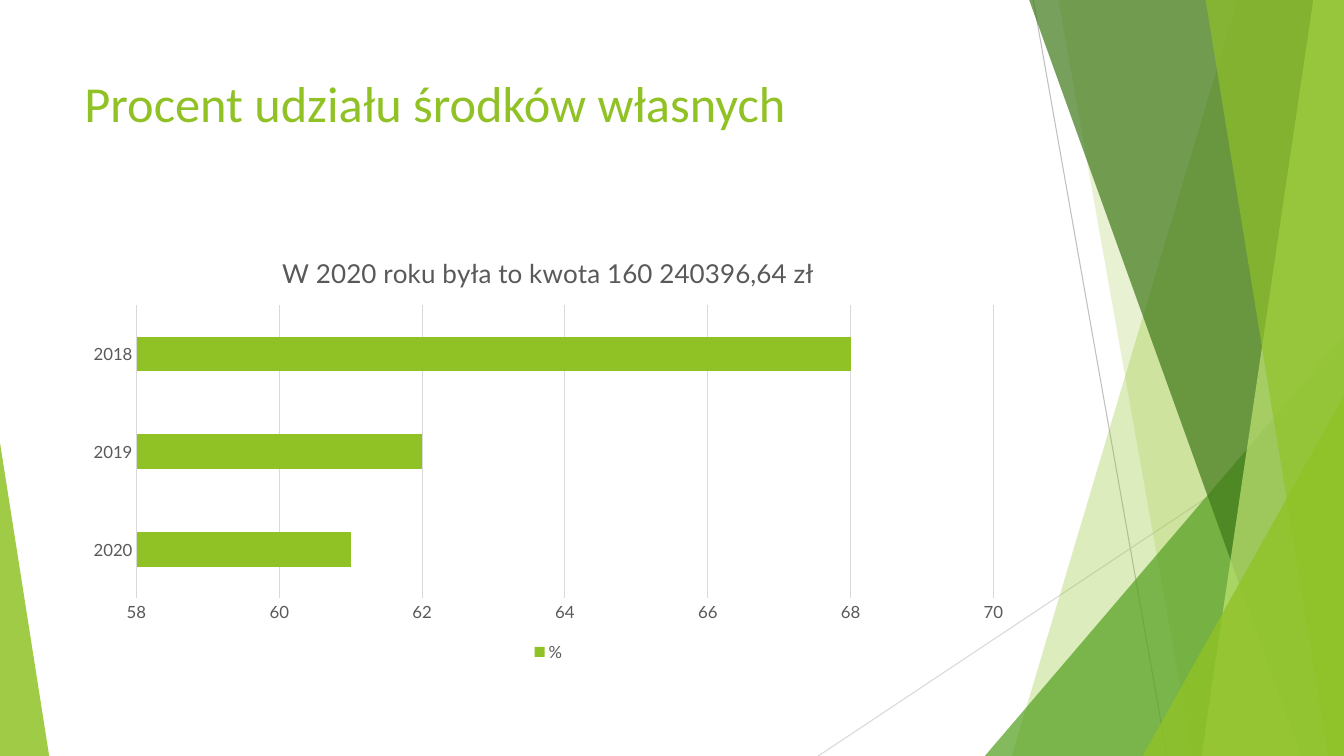
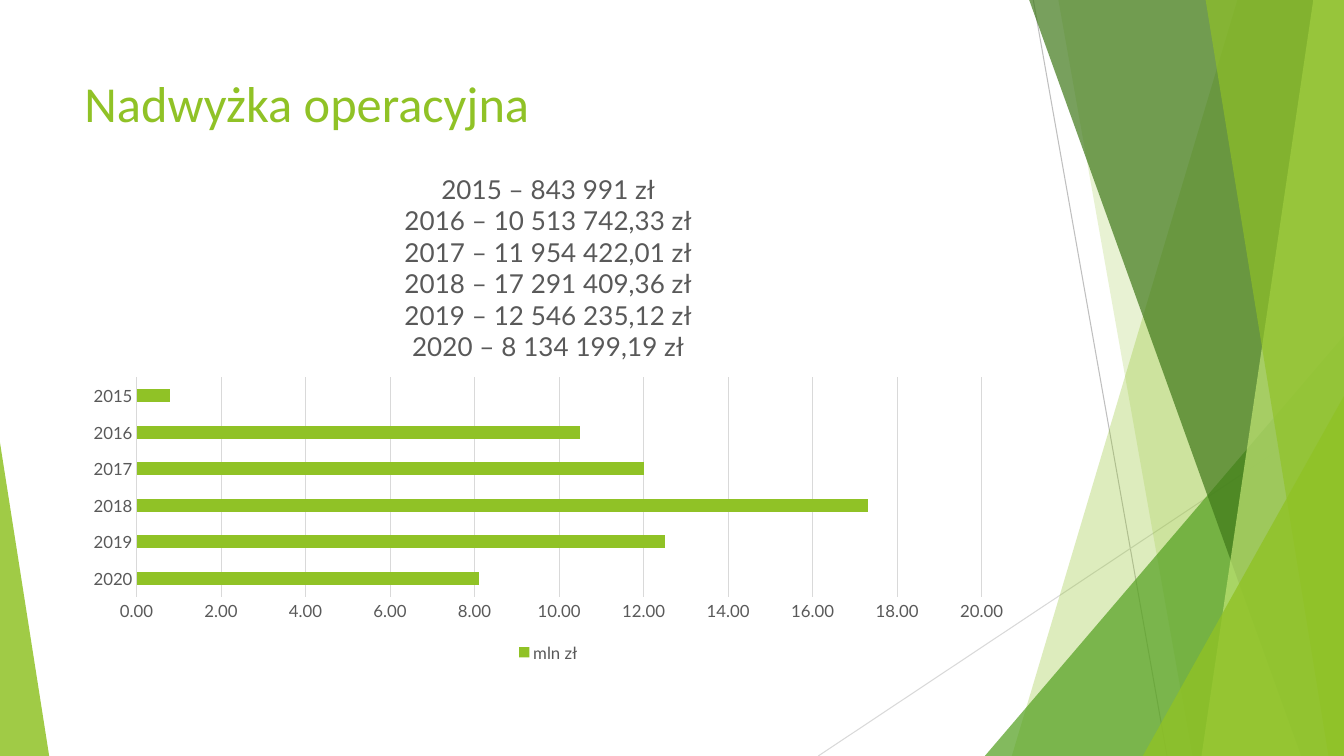
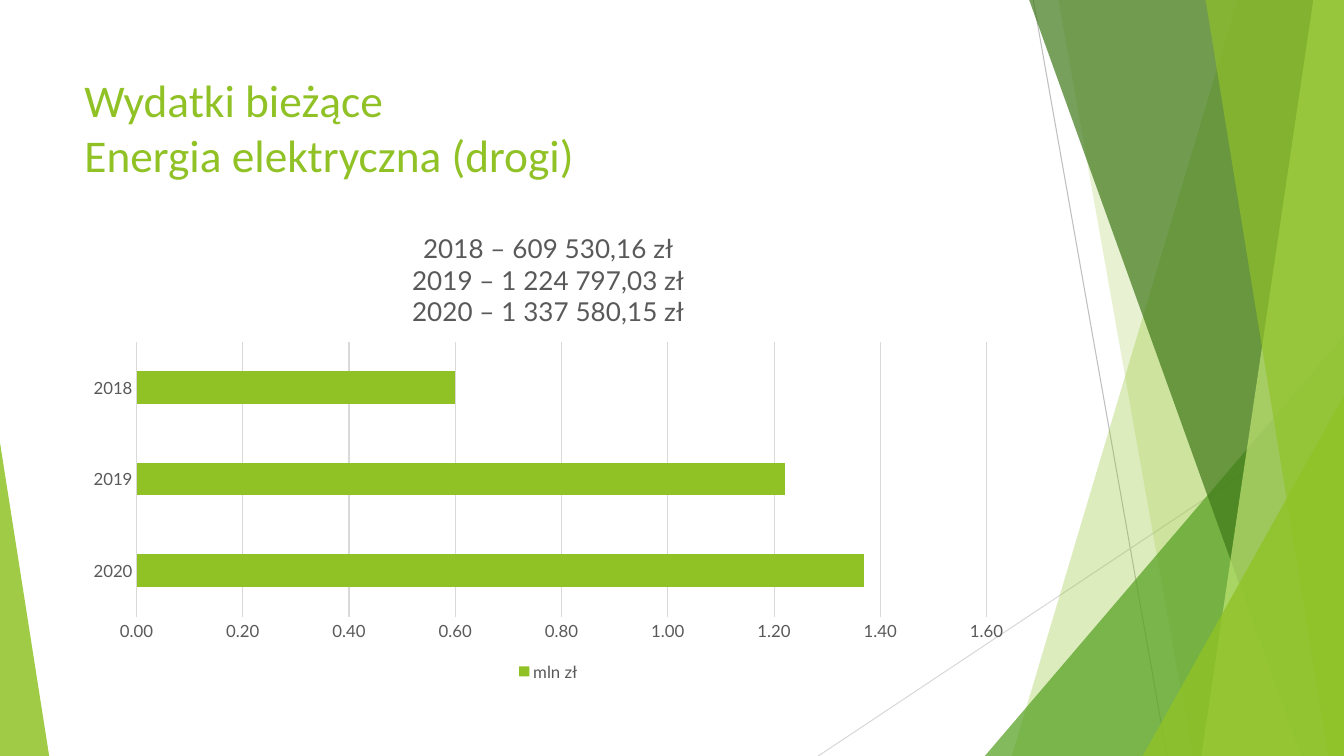
import pptx
import pptx.chart.data
import pptx.dml.color
import pptx.enum.chart
import pptx.enum.shapes
import pptx.enum.text
import pptx.oxml
import pptx.oxml.ns
import pptx.util
from lxml import etree

Cm = pptx.util.Cm
Pt = pptx.util.Pt

# Content: heading, chart title lines, series, years from bottom to top
SLIDES = [
    {
        "heading": ["Procent udziału środków własnych"], "heading_size": 36,
        "summary": ["W 2020 roku była to kwota 160 240396,64 zł"],
        "series": "%", "format": "General", "scale": (58, 70, 2),
        "values": {"2020": 61, "2019": 62, "2018": 68},
        "top": 5.94, "height": 10.84,
    },
    {
        "heading": ["Nadwyżka operacyjna"], "heading_size": 36,
        "summary": ["2015 – 843 991 zł", "2016 – 10 513 742,33 zł",
                    "2017 – 11 954 422,01 zł", "2018 – 17 291 409,36 zł",
                    "2019 – 12 546 235,12 zł", "2020 – 8 134 199,19 zł"],
        "series": "mln zł", "format": "#,##0.00", "scale": (0, 20, 2),
        "values": {"2020": 8.1, "2019": 12.5, "2018": 17.3,
                   "2017": 12, "2016": 10.5, "2015": 0.8},
        "top": 3.84, "height": 12.95,
    },
    {
        "heading": ["Wydatki bieżące", "Energia elektryczna (drogi)"],
        "heading_size": 32.4,
        "summary": ["2018 – 609 530,16 zł", "2019 – 1 224 797,03 zł",
                    "2020 – 1 337 580,15 zł"],
        "series": "mln zł", "format": "#,##0.00", "scale": (0, 1.6, 0.2),
        "values": {"2020": 1.37, "2019": 1.22, "2018": 0.6},
        "top": 5.36, "height": 11.91,
    },
]

# Shared style, lengths in cm
WIDTH, HEIGHT = 33.87, 19.05
LEFT, CONTENT_WIDTH = 1.88, 23.88
HEADING_TOP, HEADING_HEIGHT = 1.7, 3.66
HEADING_FONT, CHART_FONT = "Calibri", "Lato"
COLORS = {
    "lime": "90C226", "green": "54A021", "forest": "3F7819", "pale": "C0E474",
    "text": "595959", "grid": "D9D9D9", "ray": "BFBFBF",
}

# Backdrop, from back to front
RAYS = [((26.04, 0), (29.41, HEIGHT), "ray"),
        ((WIDTH, 10.24), (20.62, HEIGHT), "grid")]
# A pane runs to the right edge: x at top, x at bottom.
# A peak stands on the bottom edge: left, top, width, apex position.
FACETS = [
    ("pane", (31.19, 25.5), "lime", 30),
    ("pane", (26.67, 30.05), "lime", 20),
    ("peak", (24.82, 8.46, 9.05, 1), "green", 72),
    ("pane", (25.93, 32.79), "forest", 70),
    ("pane", (33.1, 30.28), "pale", 70),
    ("pane", (30.38, 33.48), "lime", 65),
    ("peak", (28.8, 9.98, 5.07, 1), "lime", 80),
    ("peak", (0, 11.15, 1.24, 0), "lime", 85),
]


def rgb(name):
    return pptx.dml.color.RGBColor.from_string(COLORS[name])


def style_font(font, *, size, color, face):
    font.size, font.name, font.bold = Pt(size), face, False
    font.color.rgb = rgb(color)


def style_line(line, color):
    line.color.rgb = rgb(color)
    line.width = Pt(0.75)


def write(frame, lines, *, align=None, **font_format):
    for index, line in enumerate(lines):
        paragraph = frame.add_paragraph() if index else frame.paragraphs[0]
        paragraph.alignment = align
        run = paragraph.add_run()
        run.text = line
        style_font(run.font, **font_format)


def add_pane(shapes, top_x, bottom_x):
    outline = shapes.build_freeform(Cm(top_x), Cm(-0.02))
    outline.add_line_segments([(Cm(WIDTH), Cm(-0.02)), (Cm(WIDTH), Cm(HEIGHT)),
                               (Cm(bottom_x), Cm(HEIGHT))], close=True)
    return outline.convert_to_shape()


def add_peak(shapes, left, top, width, apex):
    peak = shapes.add_shape(pptx.enum.shapes.MSO_SHAPE.ISOSCELES_TRIANGLE,
                            Cm(left), Cm(top), Cm(width), Cm(HEIGHT - top))
    peak.adjustments[0] = apex
    return peak


def add_backdrop(shapes):
    for start, end, color in RAYS:
        ray = shapes.add_connector(pptx.enum.shapes.MSO_CONNECTOR.STRAIGHT,
                                   *map(Cm, start + end))
        style_line(ray.line, color)
        etree.SubElement(ray._element.spPr, pptx.oxml.ns.qn("a:effectLst"))
    builders = {"pane": add_pane, "peak": add_peak}
    for kind, geometry, color, opacity in FACETS:
        facet = builders[kind](shapes, *geometry)
        facet.shadow.inherit = False
        facet.line.fill.background()
        facet.fill.solid()
        facet.fill.fore_color.rgb = rgb(color)
        tint = facet._element.spPr.find(".//" + pptx.oxml.ns.qn("a:srgbClr"))
        alpha = etree.SubElement(tint, pptx.oxml.ns.qn("a:alpha"))
        alpha.set("val", str(opacity * 1000))


def add_heading(shapes, lines, size):
    heading = shapes.add_textbox(Cm(LEFT), Cm(HEADING_TOP),
                                 Cm(CONTENT_WIDTH), Cm(HEADING_HEIGHT))
    heading.text_frame.word_wrap = True
    write(heading.text_frame, lines, size=size, color="lime", face=HEADING_FONT)


def add_bars(shapes, content):
    data = pptx.chart.data.CategoryChartData(number_format=content["format"])
    data.categories = list(content["values"])
    data.add_series(content["series"], list(content["values"].values()))
    chart = shapes.add_chart(
        pptx.enum.chart.XL_CHART_TYPE.BAR_CLUSTERED, Cm(LEFT), Cm(content["top"]),
        Cm(CONTENT_WIDTH), Cm(content["height"]), data).chart
    label_format = {"size": 12, "color": "text", "face": CHART_FONT}
    style_font(chart.font, **label_format)

    # Title and legend
    write(chart.chart_title.text_frame, content["summary"],
          align=pptx.enum.text.PP_ALIGN.CENTER, size=18.6, color="text",
          face=CHART_FONT)
    chart.chart_title.include_in_layout = False
    chart.has_legend = True
    chart.legend.position = pptx.enum.chart.XL_LEGEND_POSITION.BOTTOM
    chart.legend.include_in_layout = False
    style_font(chart.legend.font, **label_format)

    # Bars
    plot = chart.plots[0]
    plot.gap_width = 182
    plot.vary_by_categories = False
    bars = plot.series[0]
    bars.format.fill.solid()
    bars.format.fill.fore_color.rgb = rgb("lime")

    # Axes
    years, amounts = chart.category_axis, chart.value_axis
    for axis in (years, amounts):
        axis.major_tick_mark = pptx.enum.chart.XL_TICK_MARK.NONE
        axis.minor_tick_mark = pptx.enum.chart.XL_TICK_MARK.NONE
        style_font(axis.tick_labels.font, **label_format)
    years.has_major_gridlines = False
    style_line(years.format.line, "grid")
    amounts.minimum_scale, amounts.maximum_scale, amounts.major_unit = content["scale"]
    amounts.has_major_gridlines = True
    style_line(amounts.major_gridlines.format.line, "grid")
    amounts.format.line.fill.background()
    amounts.tick_labels.number_format = content["format"]
    amounts.tick_labels.number_format_is_linked = False


def main():
    deck = pptx.Presentation()
    deck.slide_width, deck.slide_height = Cm(WIDTH), Cm(HEIGHT)
    for content in SLIDES:
        shapes = deck.slides.add_slide(deck.slide_layouts[6]).shapes
        add_backdrop(shapes)
        add_heading(shapes, content["heading"], content["heading_size"])
        add_bars(shapes, content)
    deck.save("out.pptx")


if __name__ == "__main__":
    main()
